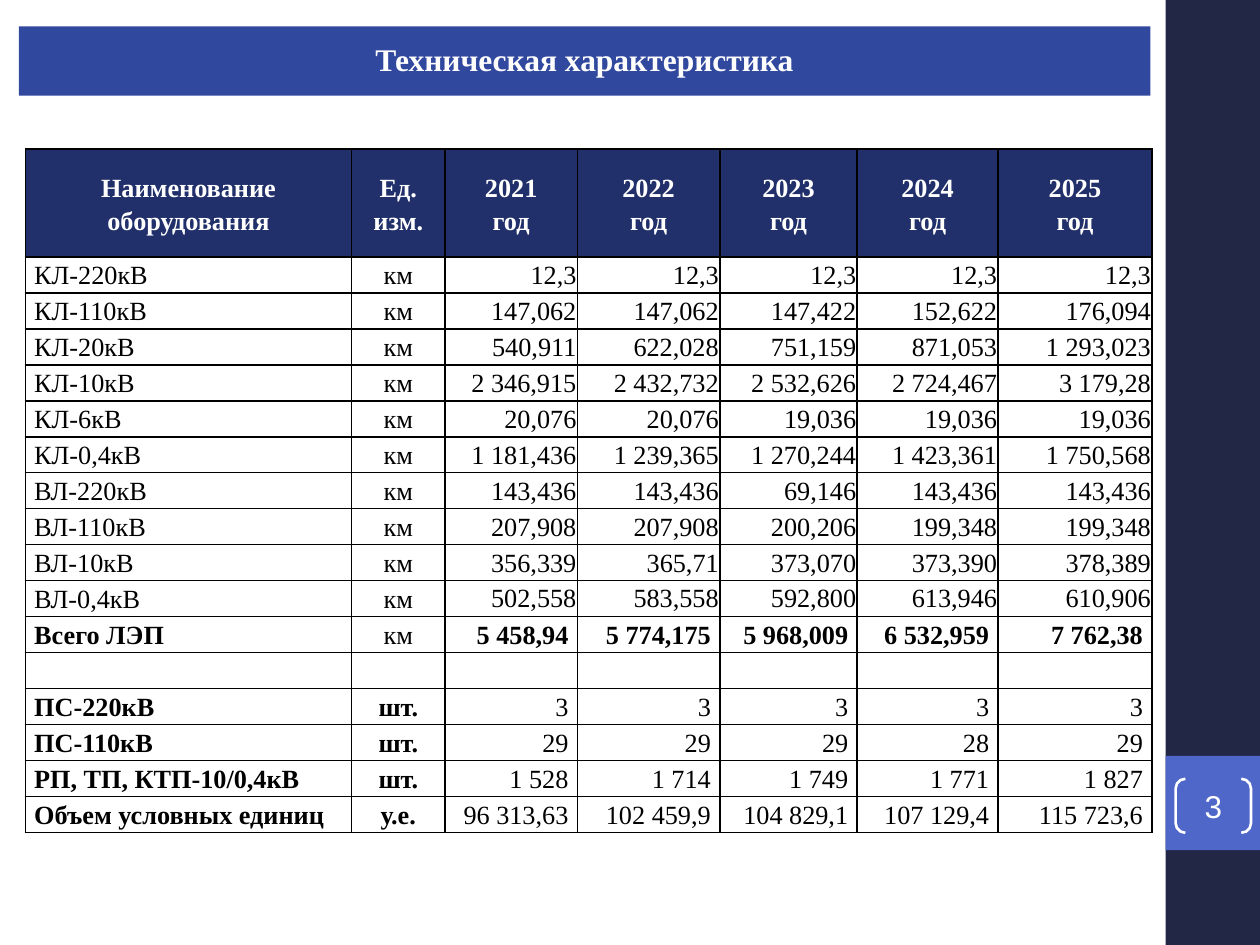
"""Build the slide with the table of technical characteristics of the power grid."""
from lxml import etree
from pptx import Presentation
from pptx import util as u
from pptx.dml.color import RGBColor
from pptx.enum import shapes, text
from pptx.oxml.ns import qn

TITLE = "Техническая характеристика"
PAGE_NUMBER = "3"
HEADER = ["Наименование оборудования", "Ед.\nизм."] + [f"{year}\nгод" for year in range(2021, 2026)]
LINES = [
    ("КЛ-220кВ", "км", "12,3", "12,3", "12,3", "12,3", "12,3"),
    ("КЛ-110кВ", "км", "147,062", "147,062", "147,422", "152,622", "176,094"),
    ("КЛ-20кВ", "км", "540,911", "622,028", "751,159", "871,053", "1 293,023"),
    ("КЛ-10кВ", "км", "2 346,915", "2 432,732", "2 532,626", "2 724,467", "3 179,28"),
    ("КЛ-6кВ", "км", "20,076", "20,076", "19,036", "19,036", "19,036"),
    ("КЛ-0,4кВ", "км", "1 181,436", "1 239,365", "1 270,244", "1 423,361", "1 750,568"),
    ("ВЛ-220кВ", "км", "143,436", "143,436", "69,146", "143,436", "143,436"),
    ("ВЛ-110кВ", "км", "207,908", "207,908", "200,206", "199,348", "199,348"),
    ("ВЛ-10кВ", "км", "356,339", "365,71", "373,070", "373,390", "378,389"),
    ("ВЛ-0,4кВ", "км", "502,558", "583,558", "592,800", "613,946", "610,906"),
]
TOTAL = ("Всего ЛЭП", "км", "5 458,94", "5 774,175", "5 968,009", "6 532,959", "7 762,38")
SPACER = ("",) * len(HEADER)
STATIONS = [
    ("ПС-220кВ", "шт.", "3", "3", "3", "3", "3"),
    ("ПС-110кВ", "шт.", "29", "29", "29", "28", "29"),
    ("РП, ТП, КТП-10/0,4кВ", "шт.", "1 528", "1 714", "1 749", "1 771", "1 827"),
    ("Объем условных единиц", "у.е.", "96 313,63", "102 459,9", "104 829,1", "107 129,4", "115 723,6"),
]

COLUMN_WIDTHS = (6.58, 1.88, 2.67, 2.87, 2.77, 2.84, 3.1)
TABLE_LEFT, TABLE_TOP, TABLE_HEIGHT, HEADER_HEIGHT = 0.51, 3, 13.79, 2.18
SLIDE_WIDTH, SLIDE_HEIGHT, SIDEBAR_WIDTH = 25.4, 19.05, 1.9

SERIF, SANS = "Times New Roman", "Arial"
WHITE = RGBColor(0xFF, 0xFF, 0xFF)
BLACK = RGBColor(0, 0, 0)
SIDEBAR = RGBColor(0x21, 0x27, 0x45)
BADGE = RGBColor(0x4E, 0x67, 0xC8)
BANNER = RGBColor(0x31, 0x48, 0x9F)
HEADER_FILL = RGBColor(0x21, 0x30, 0x6A)
LEFT, CENTER, RIGHT = text.PP_ALIGN.LEFT, text.PP_ALIGN.CENTER, text.PP_ALIGN.RIGHT
MIDDLE, TOP = text.MSO_ANCHOR.MIDDLE, text.MSO_ANCHOR.TOP


def write(frame, content, size, font, color, bold=False, align=CENTER, spacing=1.0):
    frame.text = content
    for paragraph in frame.paragraphs:
        paragraph.alignment = align
        paragraph.line_spacing = spacing
        for run in paragraph.runs:
            run.font.size = u.Pt(size)
            run.font.name = font
            run.font.bold = bold
            run.font.color.rgb = color
        if not paragraph.runs:
            etree.SubElement(paragraph._p, qn("a:endParaRPr"), sz=str(size * 100))


def set_margins(target, left, top, right, bottom):
    target.margin_left, target.margin_top = u.Cm(left), u.Cm(top)
    target.margin_right, target.margin_bottom = u.Cm(right), u.Cm(bottom)


def place(shape, left, top, width, height):
    shape.left, shape.top, shape.width, shape.height = map(u.Cm, (left, top, width, height))


def add_shape(slide, kind, box, fill=None):
    shape = slide.shapes.add_shape(kind, *map(u.Cm, box))
    shape.shadow.inherit = False
    if fill is None:
        shape.fill.background()
    else:
        shape.fill.solid()
        shape.fill.fore_color.rgb = fill
    shape.line.fill.background()
    return shape


def add_sidebar(slide):
    left = SLIDE_WIDTH - SIDEBAR_WIDTH
    rectangle = shapes.MSO_SHAPE.RECTANGLE
    add_shape(slide, rectangle, (left, 0, SIDEBAR_WIDTH, SLIDE_HEIGHT), SIDEBAR)
    add_shape(slide, rectangle, (left, 15.24, SIDEBAR_WIDTH, SIDEBAR_WIDTH), BADGE)
    bracket = add_shape(slide, shapes.MSO_SHAPE.DOUBLE_BRACKET, (23.7, 15.7, 1.52, 1.09))
    bracket.adjustments[0] = 0.18
    bracket.line.color.rgb = WHITE
    bracket.line.width = u.Pt(1.5)
    set_margins(bracket.text_frame, 0, 0, 0, 0)
    bracket.text_frame.vertical_anchor = MIDDLE
    write(bracket.text_frame, PAGE_NUMBER, 18, SANS, WHITE)


def add_title(slide):
    title = slide.shapes.title
    place(title, 0.38, 0.53, 22.81, 1.4)
    geometry = etree.SubElement(title._element.spPr, qn("a:prstGeom"), prst="snip2DiagRect")
    guides = etree.SubElement(geometry, qn("a:avLst"))
    for name, value in (("adj1", 0), ("adj2", 50000)):
        etree.SubElement(guides, qn("a:gd"), name=name, fmla=f"val {value}")
    title.fill.solid()
    title.fill.fore_color.rgb = BANNER
    set_margins(title.text_frame, 0.18, 0.1, 0.18, 0.1)
    title.text_frame.vertical_anchor = MIDDLE
    write(title.text_frame, TITLE, 18, SERIF, WHITE, bold=True, spacing=0.9)


def add_borders(cell):
    properties = cell._tc.get_or_add_tcPr()
    for side in ("lnL", "lnR", "lnT", "lnB"):
        line = etree.SubElement(properties, qn(f"a:{side}"), w=str(u.Pt(1)))
        fill = etree.SubElement(line, qn("a:solidFill"))
        etree.SubElement(fill, qn("a:srgbClr"), val=str(BLACK))


def format_cell(cell, content, column, row):
    is_header, is_line = row is HEADER, row in LINES
    is_value = column > 1
    add_borders(cell)
    if is_header:
        cell.fill.solid()
        cell.fill.fore_color.rgb = HEADER_FILL
    else:
        cell.fill.background()
    tight = is_line and is_value
    set_margins(cell, *((0.02, 0.02, 0.02, 0) if tight else (0.18, 0, 0.18, 0)))
    cell.vertical_anchor = MIDDLE if is_header or tight else TOP
    bold = is_header or (row is TOTAL and column != 1) or (row in STATIONS and not is_value)
    align = CENTER if is_header or column == 1 else RIGHT if is_value else LEFT
    spacing = 1.0 if tight or row is SPACER else 1.15
    write(cell.text_frame, content, 15, SERIF, WHITE if is_header else BLACK, bold, align, spacing)


def add_equipment_table(slide):
    rows = [HEADER, *LINES, TOTAL, SPACER, *STATIONS]
    box = map(u.Cm, (TABLE_LEFT, TABLE_TOP, sum(COLUMN_WIDTHS), TABLE_HEIGHT))
    table = slide.shapes.add_table(len(rows), len(HEADER), *box).table
    table.first_row = table.horz_banding = False
    for column, width in zip(table.columns, COLUMN_WIDTHS):
        column.width = u.Cm(width)
    body_height = (TABLE_HEIGHT - HEADER_HEIGHT) / (len(rows) - 1)
    for index, row in enumerate(rows):
        table.rows[index].height = u.Cm(body_height if index else HEADER_HEIGHT)
        for column, content in enumerate(row):
            format_cell(table.cell(index, column), content, column, row)


def main():
    presentation = Presentation()
    presentation.slide_width, presentation.slide_height = u.Cm(SLIDE_WIDTH), u.Cm(SLIDE_HEIGHT)
    slide = presentation.slides.add_slide(presentation.slide_layouts[5])
    add_sidebar(slide)
    add_equipment_table(slide)
    add_title(slide)
    presentation.save("out.pptx")


if __name__ == "__main__":
    main()
